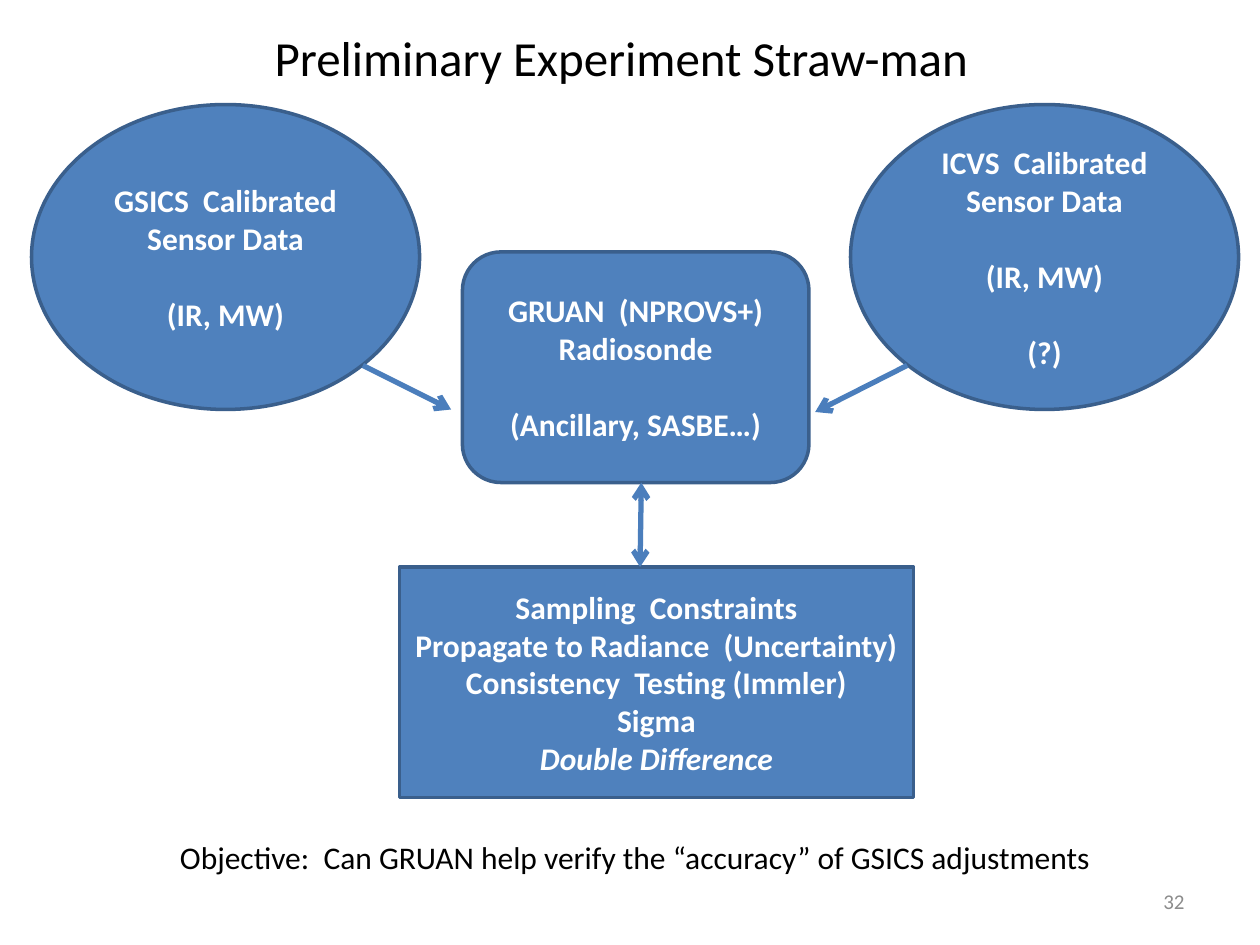
from lxml.etree import SubElement
from pptx import Presentation
from pptx.dml.color import RGBColor
from pptx.enum.shapes import MSO_CONNECTOR, MSO_SHAPE
from pptx.enum.text import MSO_ANCHOR, PP_ALIGN
from pptx.oxml.ns import qn
from pptx.util import Inches, Pt

COLORS = {
    "fill": "4F81BD",
    "edge": "3A5F8C",
    "arrow": "4B7EBC",
    "white": "FFFFFF",
    "black": "000000",
    "gray": "8C8C8C",
}
FACE = "Calibri"
GAP = Pt(22)


def color(name):
    return RGBColor.from_string(COLORS[name])


def style(para, size, name, align, bold=False):
    para.alignment = align
    font = para.font
    font.name, font.size, font.bold = FACE, Pt(size), bold
    font.color.rgb = color(name)


def place(shape, left, top, width, height):
    shape.left, shape.top = Inches(left), Inches(top)
    shape.width, shape.height = Inches(width), Inches(height)


def add_node(slide, kind, box, groups, slant=None):
    shape = slide.shapes.add_shape(kind, *map(Inches, box))
    shape.shadow.inherit = False
    shape.fill.solid()
    shape.fill.fore_color.rgb = color("fill")
    shape.line.color.rgb = color("edge")
    shape.line.width = Pt(2)
    frame = shape.text_frame
    frame.word_wrap = True
    frame.vertical_anchor = MSO_ANCHOR.MIDDLE
    para = frame.paragraphs[0]
    for i, group in enumerate(groups):
        for j, line in enumerate(group):
            if i or j:
                para = frame.add_paragraph()
            para.text = line
            style(para, 18, "white", PP_ALIGN.CENTER, True)
            if i and not j:
                para.space_before = GAP
            if line == slant:
                para.font.italic = True


def fill_text(shape, text, size, name, align=PP_ALIGN.LEFT,
              anchor=MSO_ANCHOR.TOP, wrap=False):
    frame = shape.text_frame
    frame.text = text
    frame.word_wrap = wrap
    frame.vertical_anchor = anchor
    style(frame.paragraphs[0], size, name, align)


def add_label(slide, box, *args, **kwargs):
    shape = slide.shapes.add_textbox(*map(Inches, box))
    fill_text(shape, *args, **kwargs)


def add_arrow(slide, start, end, ends=("tailEnd",)):
    link = slide.shapes.add_connector(
        MSO_CONNECTOR.STRAIGHT, *map(Inches, start + end))
    link.line.color.rgb = color("arrow")
    link.line.width = Pt(3)
    line = link.line._get_or_add_ln()
    for tag in ends:
        SubElement(line, qn("a:" + tag), type="arrow")
    SubElement(link._element.spPr, qn("a:effectLst"))


def main():
    deck = Presentation()
    deck.slide_width, deck.slide_height = Inches(10), Inches(7.5)
    slide = deck.slides.add_slide(deck.slide_layouts[5])

    title = slide.shapes.title
    place(title, 2.08, 0.17, 5.95, 0.57)
    fill_text(title, "Preliminary Experiment Straw-man", 28, "black")

    add_node(slide, MSO_SHAPE.OVAL, (0.25, 0.83, 3.08, 2.42),
             [["GSICS  Calibrated Sensor Data"], ["(IR, MW)"]])
    add_node(slide, MSO_SHAPE.OVAL, (6.75, 0.83, 3.08, 2.42),
             [["ICVS  Calibrated Sensor Data"], ["(IR, MW)"], ["(?)"]])
    add_node(slide, MSO_SHAPE.ROUNDED_RECTANGLE, (3.67, 2, 2.75, 1.83),
             [["GRUAN  (NPROVS+)", "Radiosonde"], ["(Ancillary, SASBE…)"]])
    add_node(slide, MSO_SHAPE.RECTANGLE, (3.17, 4.5, 4.08, 1.83),
             [["Sampling  Constraints",
               "Propagate to Radiance  (Uncertainty)",
               "Consistency  Testing (Immler)",
               "Sigma",
               "Double Difference"]], slant="Double Difference")

    add_label(slide, (1.33, 6.6, 7.62, 0.4),
              "Objective:  Can GRUAN help verify the “accuracy” of GSICS adjustments",
              18, "black")
    add_label(slide, (7.17, 6.95, 2.33, 0.4), "32", 12, "gray",
              PP_ALIGN.RIGHT, MSO_ANCHOR.MIDDLE, True)

    add_arrow(slide, (2.88, 2.9), (3.58, 3.25))
    add_arrow(slide, (7.2, 2.9), (6.47, 3.27))
    add_arrow(slide, (5.09, 3.83), (5.08, 4.5), ("headEnd", "tailEnd"))
    deck.save("out.pptx")


if __name__ == "__main__":
    main()
